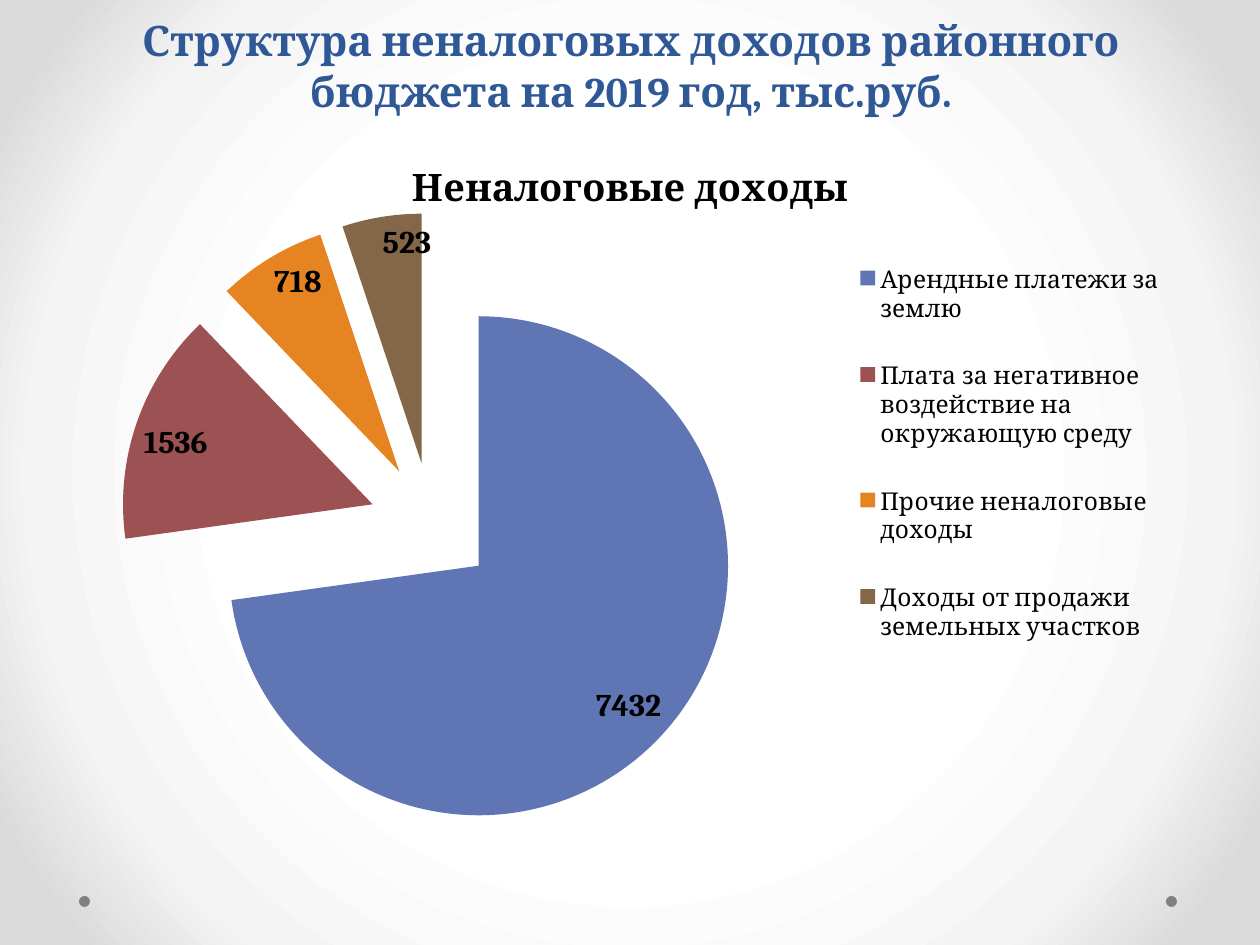
from lxml import etree
from pptx import Presentation
from pptx.chart.data import CategoryChartData
from pptx.dml.color import RGBColor
from pptx.enum.chart import XL_CHART_TYPE, XL_LABEL_POSITION, XL_LEGEND_POSITION
from pptx.enum.shapes import MSO_SHAPE
from pptx.enum.text import MSO_ANCHOR, PP_ALIGN
from pptx.oxml import parse_xml
from pptx.oxml.ns import nsdecls, qn
from pptx.util import Pt

# Content
TITLE = "Структура неналоговых доходов районного бюджета на 2019 год, тыс.руб."
SERIES = "Неналоговые доходы"
INCOME = [
    ("Арендные платежи за землю", 7432, "6076B4"),
    ("Плата за негативное воздействие на окружающую среду", 1536, "9C5252"),
    ("Прочие неналоговые доходы", 718, "E68422"),
    ("Доходы от продажи земельных участков", 523, "846648"),
]

THEME = {
    "font": "Cambria", "title": "2F5897", "text": "000000", "dot": "808080",
    "title_size": 24, "chart_title_size": 21.6, "label_size": 18, "legend_size": 14,
    "background": [(0, "FFFFFF"), (50, "FFFFFF"), (76, "F4F4F4"), (92, "DADADA"), (100, "DADADA")],
}

# Geometry in px, 126 to the inch
PX = 914400 // 126
SLIDE = (1260, 945)
TITLE_BOX = (64, 26, 1134, 96)
CHART_BOX = (63, 135, 1134, 709)
DOT_LEFTS, DOT_TOP, DOT_SIZE = (79, 1166), 896, 11
EXPLOSION = 25
PLOT_LAYOUT = (0, 0.11, 0.65, 0.88)
LEGEND_LAYOUT = (0.69, 0.13, 0.29, 0.64)


def emu(*lengths):
    return [n * PX for n in lengths]


def color(key):
    return RGBColor.from_string(THEME[key])


def style(font, size, bold, key="text"):
    font.name, font.size, font.bold = THEME["font"], Pt(size), bold
    font.color.rgb = color(key)


def set_layout(parent, box, after, inner=False):
    """Give a chart part a manual layout, placed after the named child if any."""
    for old in parent.findall(qn("c:layout")):
        parent.remove(old)
    layout = etree.Element(qn("c:layout"))
    manual = etree.SubElement(layout, qn("c:manualLayout"))
    values = [("layoutTarget", "inner")] if inner else []
    values += [("xMode", "edge"), ("yMode", "edge"), *zip("xywh", box)]
    for tag, value in values:
        etree.SubElement(manual, qn(f"c:{tag}")).set("val", str(value))
    if after:
        parent.find(qn(after)).addnext(layout)
    else:
        parent.insert(0, layout)


prs = Presentation()
prs.slide_width, prs.slide_height = emu(*SLIDE)
s = prs.slides.add_slide(prs.slide_layouts[5])

# Radial background
stops = "".join(
    f'<a:gs pos="{pos * 1000}"><a:srgbClr val="{rgb}"/></a:gs>' for pos, rgb in THEME["background"])
s.background.fill.solid()
bg_pr = s.background._cSld.bg.bgPr
bg_pr.replace(bg_pr[0], parse_xml(
    f'<a:gradFill {nsdecls("a")} rotWithShape="1"><a:gsLst>{stops}</a:gsLst>'
    '<a:path path="circle"><a:fillToRect l="50000" t="50000" r="50000" b="50000"/></a:path>'
    "</a:gradFill>"))

# Corner dots
for left in DOT_LEFTS:
    dot = s.shapes.add_shape(MSO_SHAPE.OVAL, *emu(left, DOT_TOP, DOT_SIZE, DOT_SIZE))
    dot.shadow.inherit = False
    dot.fill.solid()
    dot.fill.fore_color.rgb = color("dot")
    dot.line.fill.background()

# Title
title = s.shapes.title
title.left, title.top, title.width, title.height = emu(*TITLE_BOX)
tf = title.text_frame
tf.text = TITLE
tf.word_wrap = True
tf.vertical_anchor = MSO_ANCHOR.BOTTOM
p = tf.paragraphs[0]
p.alignment = PP_ALIGN.CENTER
style(p.font, THEME["title_size"], True, "title")

# Pie chart
data = CategoryChartData()
data.categories = [name for name, _, _ in INCOME]
data.add_series(SERIES, [value for _, value, _ in INCOME])
chart = s.shapes.add_chart(XL_CHART_TYPE.PIE, *emu(*CHART_BOX), data).chart
style(chart.font, THEME["label_size"], False)

chart.has_title = True
chart.chart_title.text_frame.text = SERIES
style(chart.chart_title.text_frame.paragraphs[0].font, THEME["chart_title_size"], True)
chart.chart_title.include_in_layout = False

plot = chart.plots[0]
plot.vary_by_categories = True
series = plot.series[0]
for i, (_, _, rgb) in enumerate(INCOME):
    fill = series.points[i].format.fill
    fill.solid()
    fill.fore_color.rgb = RGBColor.from_string(rgb)
explosion = etree.Element(qn("c:explosion"))
explosion.set("val", str(EXPLOSION))
series._element.find(qn("c:dPt")).addprevious(explosion)

labels = series.data_labels
labels.show_value = True
labels.position = XL_LABEL_POSITION.INSIDE_END
style(labels.font, THEME["label_size"], True)

chart.has_legend = True
legend = chart.legend
legend.position = XL_LEGEND_POSITION.RIGHT
legend.include_in_layout = False
style(legend.font, THEME["legend_size"], False)

set_layout(plot._element.getparent(), PLOT_LAYOUT, None, inner=True)
set_layout(legend._element, LEGEND_LAYOUT, "c:legendPos")

prs.save("out.pptx")
